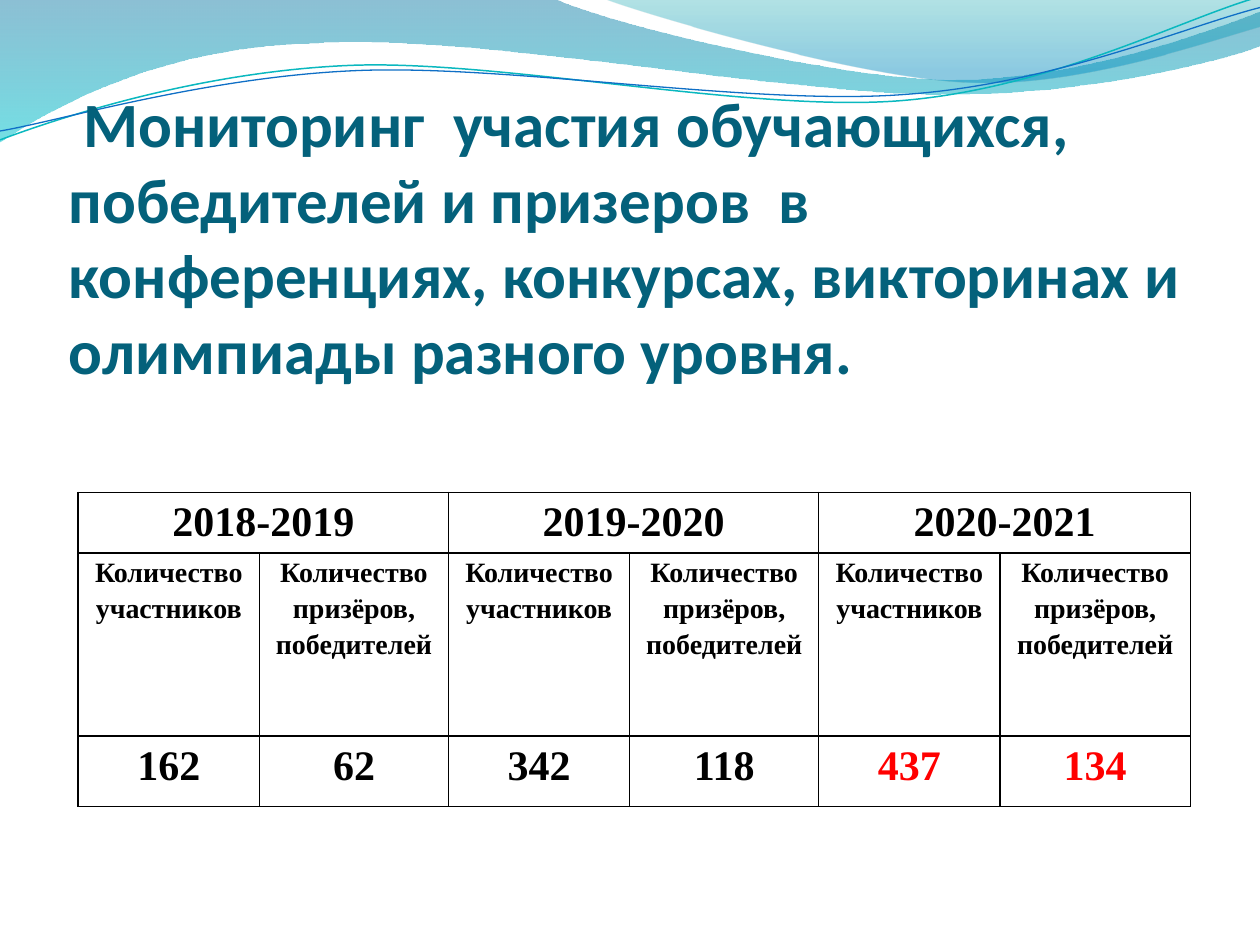
from pptx import Presentation
from pptx.dml.color import RGBColor
from pptx.enum.text import MSO_ANCHOR, PP_ALIGN
from pptx.oxml.ns import qn
from pptx.util import Pt
from lxml.etree import SubElement

BLACK = RGBColor(0x00, 0x00, 0x00)
RED = RGBColor(0xFF, 0x00, 0x00)
TITLE_BLUE = RGBColor(0x04, 0x61, 0x7B)
TEAL_LINE = RGBColor(0x0A, 0xB8, 0xBF)
BLUE_LINE = RGBColor(0x0F, 0x6F, 0xC6)
WAVE_TOP = RGBColor(0x00, 0x74, 0xA1)
WAVE_BOTTOM = RGBColor(0x00, 0xC6, 0xCF)
CREST_TOP = RGBColor(0x00, 0xA1, 0xA9)
CREST_BOTTOM = RGBColor(0x00, 0x8B, 0xBF)

TITLE = (" Мониторинг  участия обучающихся, победителей и призеров  в "
         "конференциях, конкурсах, викторинах и олимпиады разного уровня.")

# (school year, participants, prize winners, colour of the figures)
YEARS = [
    ("2018-2019", 162, 62, BLACK),
    ("2019-2020", 342, 118, BLACK),
    ("2020-2021", 437, 134, RED),
]
MEASURES = ("Количество участников", "Количество призёров, победителей")
COLUMN_WIDTHS = (103.6, 108, 103.6, 108, 103.6, 108.8)
ROW_HEIGHTS = (34.6, 104.6, 40.3)

# Outlines in points: a pair is a straight step, six numbers are a Bezier curve.
WAVE = [(0, 0), (316.8, -0.7), (342.7, 12.2, 478.1, 45.4, 545.8, 45.4),
        (614.2, 45.4, 689.8, 18.7, 720, 6.5), (720.7, 25.9),
        (707.8, 31.7, 626.4, 54.7, 537.1, 54),
        (447.8, 54, 275, 20.2, 185, 24.5),
        (92.9, 25.9, 33.1, 59.8, -0.7, 81.4)]
CREST = [(344.9, -0.7), (366.5, 7.9, 491, 44.6, 553.7, 46.8),
         (616.3, 49.7, 691.9, 23, 720, 15.1), (720, 0)]
# The two thin curves are given level, then turned by CURVE_ROTATION.
TEAL_CURVE = [(-1.4, 63), (33.7, 51.7, 114, 29.5, 199.8, 29.9),
              (284.8, 30.3, 425.8, 67.3, 512.4, 64.9),
              (599, 62.4, 676.5, 25.7, 720.2, 15.5)]
BLUE_CURVE = [(-1.1, 57.9), (32.9, 53.8, 118.3, 32.5, 204, 33),
              (290.5, 33.4, 428.9, 63.8, 515.5, 61.4),
              (601.4, 59.7, 678.5, 30.1, 721.4, 21.3)]
CURVE_ROTATION = 357.3
UNITS_PER_POINT = 100


def add_outline(slide, outline, closed):
    """Add a freeform whose six-number steps become Bezier curves."""
    points = [(step[i] * UNITS_PER_POINT, step[i + 1] * UNITS_PER_POINT)
              for step in outline for i in range(0, len(step), 2)]
    builder = slide.shapes.build_freeform(*points[0], scale=Pt(1) / UNITS_PER_POINT)
    builder.add_line_segments(points[1:], close=closed)
    shape = builder.convert_to_shape()
    shape.shadow.inherit = False

    segments = iter(list(shape._element.iter(qn("a:lnTo"))))
    for step in outline[1:]:
        segment = next(segments)
        if len(step) == 6:
            curve = segment.makeelement(qn("a:cubicBezTo"))
            segment.addprevious(curve)
            for part in (segment, next(segments), next(segments)):
                curve.append(part[0])
                part.getparent().remove(part)
    return shape


def add_band(slide, outline, stops):
    """Add a filled wave; stops are (position, colour, opacity in percent)."""
    band = add_outline(slide, outline, closed=True)
    band.line.fill.background()
    band.fill.gradient()
    band.fill.gradient_angle = 270
    for stop, (position, color, _) in zip(band.fill.gradient_stops, stops):
        stop.position = position
        stop.color.rgb = color
    colors = band._element.spPr.iter(qn("a:srgbClr"))
    for color, (_, _, opacity) in zip(colors, stops):
        SubElement(color, qn("a:alpha"), val=str(opacity * 1000))


def add_curve(slide, outline, color, width):
    curve = add_outline(slide, outline, closed=False)
    curve.rotation = CURVE_ROTATION
    curve.fill.background()
    curve.line.color.rgb = color
    curve.line.width = Pt(width)


def write(frame, text, *, font, size, color, align=PP_ALIGN.LEFT, spacing=None):
    paragraph = frame.paragraphs[0]
    paragraph.alignment = align
    paragraph.line_spacing = spacing
    run = paragraph.add_run()
    run.text = text
    run.font.name = font
    run.font.size = Pt(size)
    run.font.bold = True
    run.font.color.rgb = color


def add_title(slide):
    box = slide.shapes.add_textbox(Pt(39.4), Pt(174.2), Pt(648), Pt(90))
    frame = box.text_frame
    frame.word_wrap = True
    frame.vertical_anchor = MSO_ANCHOR.BOTTOM
    frame.margin_left = frame.margin_right = 0
    frame.margin_top = Pt(3.6)
    frame.margin_bottom = Pt(43)  # one free line under the title
    write(frame, TITLE, font="Calibri", size=36, color=TITLE_BLUE)


def format_cell(cell):
    cell.margin_left = cell.margin_right = Pt(5)
    cell.margin_top = cell.margin_bottom = 0
    properties = cell._tc.get_or_add_tcPr()
    for side in ("a:lnL", "a:lnR", "a:lnT", "a:lnB"):
        border = SubElement(properties, qn(side), w=str(Pt(1)))
        fill = SubElement(border, qn("a:solidFill"))
        SubElement(fill, qn("a:srgbClr"), val=str(BLACK))
    cell.fill.background()


def add_results(slide):
    table = slide.shapes.add_table(
        len(ROW_HEIGHTS), len(COLUMN_WIDTHS), Pt(44.7), Pt(281.3),
        Pt(sum(COLUMN_WIDTHS)), Pt(sum(ROW_HEIGHTS))).table
    table.first_row = table.horz_banding = False
    for column, width in zip(table.columns, COLUMN_WIDTHS):
        column.width = Pt(width)
    for row, height in zip(table.rows, ROW_HEIGHTS):
        row.height = Pt(height)
    for cell in table.iter_cells():
        format_cell(cell)

    def fill_in(row, column, text, size, color=BLACK):
        write(table.cell(row, column).text_frame, text, font="Times New Roman",
              size=size, color=color, align=PP_ALIGN.CENTER, spacing=1.15)

    for i, (year, *figures, color) in enumerate(YEARS):
        first = i * len(MEASURES)
        table.cell(0, first).merge(table.cell(0, first + len(MEASURES) - 1))
        fill_in(0, first, year, 24)
        for column, (measure, figure) in enumerate(zip(MEASURES, figures), first):
            fill_in(1, column, measure, 16)
            fill_in(2, column, str(figure), 24, color)


def main():
    deck = Presentation()
    deck.slide_width, deck.slide_height = Pt(720), Pt(540)
    slide = deck.slides.add_slide(deck.slide_layouts[6])
    add_band(slide, WAVE, [(0, WAVE_TOP, 45), (1, WAVE_BOTTOM, 55)])
    add_band(slide, CREST, [(0, CREST_TOP, 30), (0.8, CREST_BOTTOM, 45)])
    add_curve(slide, TEAL_CURVE, TEAL_LINE, 0.85)
    add_curve(slide, BLUE_CURVE, BLUE_LINE, 0.75)
    add_title(slide)
    add_results(slide)
    deck.save("out.pptx")


if __name__ == "__main__":
    main()
